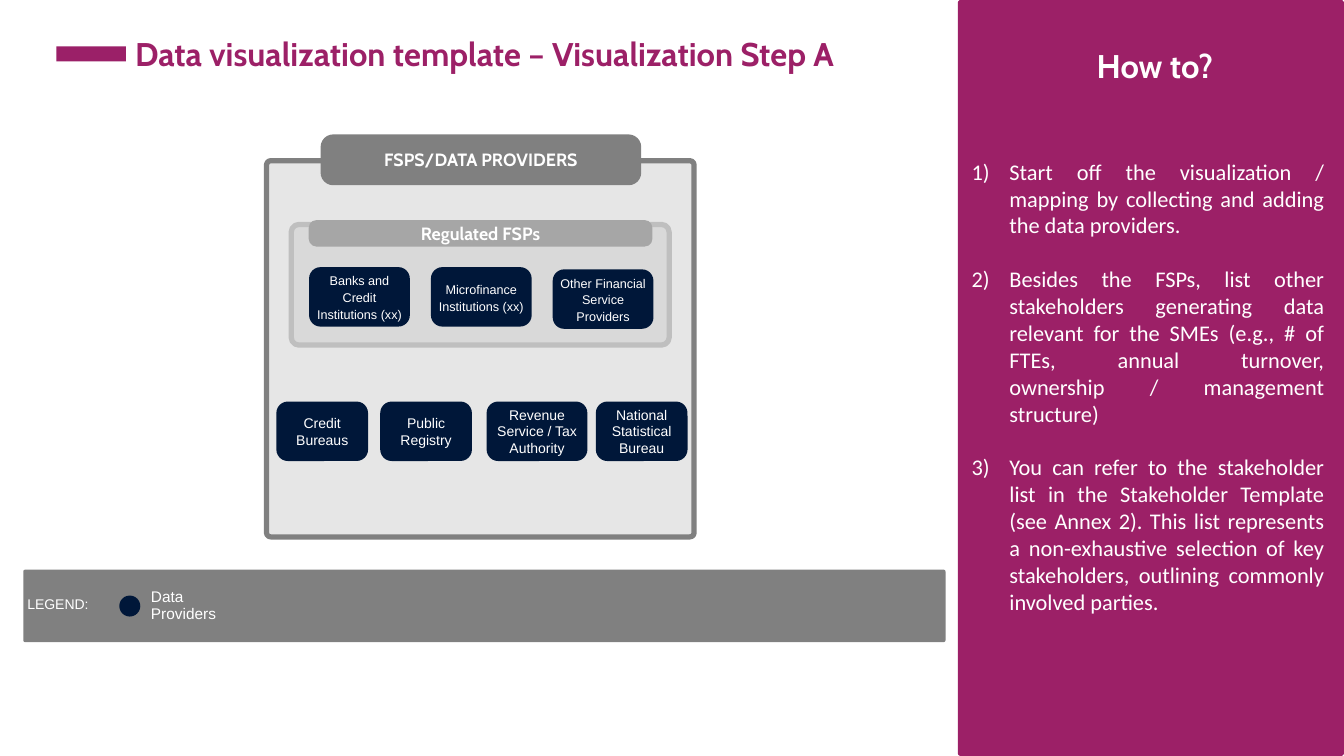
from lxml import etree
from pptx import Presentation
from pptx.dml.color import RGBColor
from pptx.enum.shapes import MSO_SHAPE
from pptx.enum.text import MSO_ANCHOR, PP_ALIGN
from pptx.oxml.ns import qn
from pptx.util import Pt

PURPLE, NAVY, WHITE = "9C2067", "001739", "FFFFFF"
GREY, FRAME_FILL = "808080", "E6E6E6"


def rgb(hex_color):
    return RGBColor.from_string(hex_color)


def write(tf, text, size, font="Arial", color=WHITE, bold=False,
          align=PP_ALIGN.LEFT, spacing=None, inset=0, anchor=MSO_ANCHOR.TOP):
    """Fill a text frame, one paragraph for each line of text."""
    tf.word_wrap = True
    tf.vertical_anchor = anchor
    tf.margin_left = tf.margin_right = Pt(inset)
    tf.margin_top = tf.margin_bottom = 0
    for i, line in enumerate(text.split("\n")):
        p = tf.paragraphs[0] if i == 0 else tf.add_paragraph()
        p.alignment = align
        if spacing:
            p.line_spacing = Pt(spacing)
        r = p.add_run()
        r.text = line
        r.font.name, r.font.size, r.font.bold = font, Pt(size), bold
        r.font.color.rgb = rgb(color)


def add_block(s, x, y, w, h, fill, radius=0, line=None,
              kind=MSO_SHAPE.ROUNDED_RECTANGLE):
    sp = s.shapes.add_shape(kind, Pt(x), Pt(y), Pt(w), Pt(h))
    sp.shadow.inherit = False
    if kind == MSO_SHAPE.ROUNDED_RECTANGLE:
        sp.adjustments[0] = radius / min(w, h)
    sp.fill.solid()
    sp.fill.fore_color.rgb = rgb(fill)
    if line:
        sp.line.color.rgb = rgb(line)
        sp.line.width = Pt(3.75)
    else:
        sp.line.fill.background()
    return sp


def add_label(s, x, y, w, h, text, size, **style):
    tf = s.shapes.add_textbox(Pt(x), Pt(y), Pt(w), Pt(h)).text_frame
    write(tf, text, size, **style)
    return tf


def add_banner(s, x, y, w, h, text, fill, radius):
    sp = add_block(s, x, y, w, h, fill, radius)
    write(sp.text_frame, text, 12.7, font="Cabin", bold=True, spacing=15.2,
          align=PP_ALIGN.CENTER, anchor=MSO_ANCHOR.MIDDLE)


def add_provider(s, x, y, w, text, size):
    # The rounded corners already inset the text by about 2.4 pt
    sp = add_block(s, x, y, w, 42.5, NAVY, 8.2)
    write(sp.text_frame, text, size, spacing=12, inset=2,
          align=PP_ALIGN.CENTER, anchor=MSO_ANCHOR.MIDDLE)


def add_heading(s, x, y, w, text, color):
    add_label(s, x, y, w, 31, text, 23.35, font="Cabin", color=color,
              bold=True, spacing=32.7)


def add_steps(s, x, y, w, h, steps):
    tf = add_label(s, x, y, w, h, "\n".join(steps), 16, font="Calibri",
                   align=PP_ALIGN.JUSTIFY)
    for i, p in enumerate(tf.paragraphs):
        pPr = p._p.get_or_add_pPr()
        pPr.set("marL", str(Pt(27)))
        pPr.set("indent", str(-Pt(27)))
        etree.SubElement(pPr, qn("a:buAutoNum"), type="arabicParenR")
        if i:
            p.space_before = Pt(19.2)


def main():
    prs = Presentation()
    prs.slide_width, prs.slide_height = Pt(960), Pt(540)
    s = prs.slides.add_slide(prs.slide_layouts[6])

    # Title
    add_block(s, 40.3, 33.1, 49.7, 10.8, "9B2068", kind=MSO_SHAPE.RECTANGLE)
    add_heading(s, 96.5, 19.4, 577,
                "Data visualization template – Visualization Step A", PURPLE)

    # Data provider frame
    add_block(s, 190.4, 114.8, 305.4, 268.7, FRAME_FILL, 3, GREY)
    add_banner(s, 229, 96, 229, 36.3, "FSPS/DATA PROVIDERS", GREY, 9)

    # Regulated providers
    add_block(s, 208, 160.3, 270, 86.2, "D9D9D9", 5.5, "BFBFBF")
    add_banner(s, 220.5, 157.2, 245.5, 18.9, "Regulated FSPs", "A6A6A6", 5.5)
    regulated = [("Banks and Credit Institutions (xx)", 190.8),
                 ("Microfinance Institutions (xx)", 190.8),
                 ("Other Financial\nService Providers", 192.4)]
    for i, (name, y) in enumerate(regulated):
        add_provider(s, 220.8 + 87 * i, y, 72, name, 9)

    # Other providers
    for name, x, w in [("Credit Bureaus", 197.4, 65.5),
                       ("Public Registry", 271.6, 65.5),
                       ("Revenue Service / Tax Authority", 347.6, 72),
                       ("National Statistical Bureau", 425.6, 65.5)]:
        add_provider(s, x, 286.8, w, name, 10)

    # Legend
    add_block(s, 16.6, 406.9, 658.8, 51.8, GREY, 1.4)
    add_label(s, 19.5, 425.2, 54, 12, "LEGEND:", 10, spacing=12)
    add_block(s, 85.2, 425.4, 15, 15, NAVY, kind=MSO_SHAPE.OVAL)
    add_label(s, 107.8, 420.6, 69, 24.5, "Data Providers", 11, spacing=12)

    # How-to panel
    add_block(s, 684.2, 0, 275.8, 540, PURPLE, 2)
    add_heading(s, 783.4, 28, 160.6, "How to?", WHITE)
    add_steps(s, 694, 112.8, 252, 310, [
        "Start off the visualization / mapping by collecting and adding "
        "the data providers.",
        "Besides the FSPs, list other stakeholders generating data relevant "
        "for the SMEs (e.g., # of FTEs, annual turnover, ownership / "
        "management structure)",
        "You can refer to the stakeholder list in the Stakeholder Template "
        "(see Annex 2). This list represents a non-exhaustive selection of "
        "key stakeholders, outlining commonly involved parties.",
    ])

    prs.save("out.pptx")


if __name__ == "__main__":
    main()
